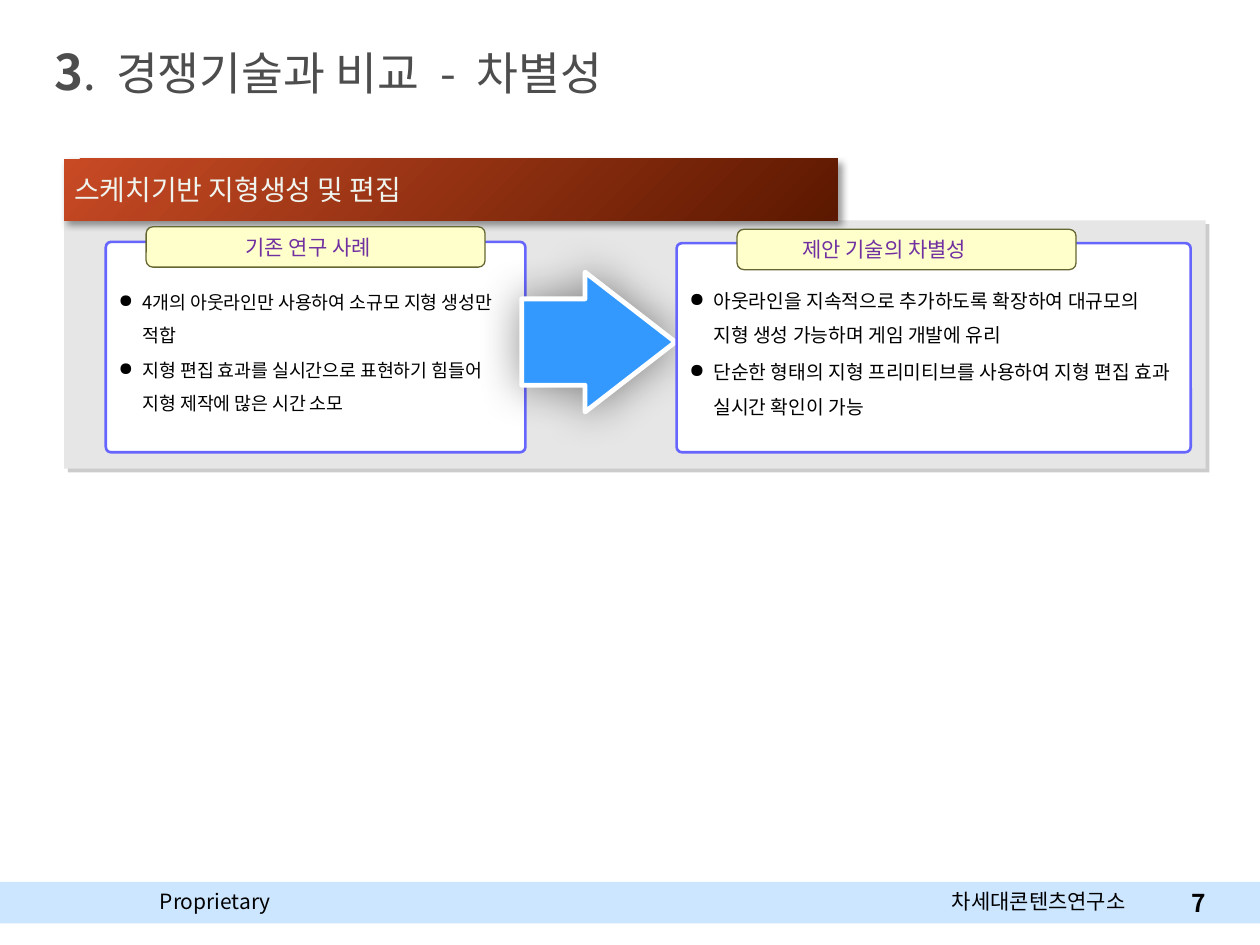
from dataclasses import dataclass

import pptx
from lxml import etree
from pptx.dml.color import RGBColor
from pptx.enum.shapes import MSO_SHAPE
from pptx.enum.text import MSO_ANCHOR, PP_ALIGN
from pptx.oxml.ns import qn
from pptx.util import Inches, Pt


@dataclass(frozen=True)
class Theme:
    font: str = "Noto Sans CJK KR"
    ink: str = "000000"
    title: str = "4D4D4D"
    footer: str = "CDE6FF"
    panel: str = "E6E6E6"
    panel_edge: str = "CCCCCC"
    banner_start: str = "C84A24"
    banner_end: str = "5C1800"
    banner_text: str = "EFF4EF"
    card: str = "FFFFFF"
    card_line: str = "6666FF"
    label: str = "FFFFCC"
    label_line: str = "666633"
    label_text: str = "7030A0"
    arrow: str = "3399FF"
    title_number_size: float = 28
    title_size: float = 26
    banner_size: float = 16
    page_size: float = 14
    small_size: float = 12


THEME = Theme()


def rgb(value):
    return RGBColor.from_string(value)


def add_span(para, text, size, color, bold=False, tracking=None):
    span = para.add_run()
    span.text = text
    span.font.size = Pt(size)
    span.font.bold = bold
    span.font.name = THEME.font
    span.font.color.rgb = rgb(color)
    properties = span.font._element
    etree.SubElement(properties, qn("a:ea"), typeface=THEME.font)
    if tracking:
        properties.set("spc", str(int(tracking * 100)))


def add_box(slide, kind, place, fill=None, line=None, line_width=1, adjust=()):
    box = slide.shapes.add_shape(kind, *map(Inches, place))
    box.shadow.inherit = False
    for index, value in enumerate(adjust):
        box.adjustments[index] = value
    if fill:
        box.fill.solid()
        box.fill.fore_color.rgb = rgb(fill)
    if line:
        box.line.color.rgb = rgb(line)
        box.line.width = Pt(line_width)
    else:
        box.line.fill.background()
    return box


def add_shadow(box, color, opacity, blur, distance):
    effects = box._element.spPr.find(qn("a:effectLst"))
    shadow = etree.SubElement(
        effects, qn("a:outerShdw"), blurRad=str(Pt(blur)), dist=str(Pt(distance)),
        dir=str(45 * 60000), algn="tl", rotWithShape="0")
    shade = etree.SubElement(shadow, qn("a:srgbClr"), val=color)
    etree.SubElement(shade, qn("a:alpha"), val=str(opacity * 1000))


def add_text(slide, place, text, size, color, align=PP_ALIGN.LEFT,
             anchor=MSO_ANCHOR.TOP, bold=False, wrap=True):
    box = slide.shapes.add_textbox(*map(Inches, place))
    frame = box.text_frame
    frame.word_wrap = wrap
    frame.vertical_anchor = anchor
    para = frame.paragraphs[0]
    para.alignment = align
    add_span(para, text, size, color, bold)


def add_title(slide):
    title = slide.shapes.title
    title.left, title.top, title.width, title.height = map(Inches, (0.33, 0.28, 7.83, 0.57))
    title.text_frame.vertical_anchor = MSO_ANCHOR.MIDDLE
    para = title.text_frame.paragraphs[0]
    para.alignment = PP_ALIGN.LEFT
    add_span(para, "3", THEME.title_number_size, THEME.title, bold=True)
    # Wide gaps are tracked spaces
    for text, tracking in ((".", None), (" ", 5.8), ("경쟁기술과 비교", None), (" ", 5.8),
                           ("-", None), (" ", 5.8), ("차별성", None)):
        add_span(para, text, THEME.title_size, THEME.title, tracking=tracking)


def add_banner(slide, text):
    banner = add_box(slide, MSO_SHAPE.RECTANGLE, (0.51, 1.26, 6.14, 0.49))
    banner.fill.gradient()
    banner.fill.gradient_angle = 315
    for stop, color in zip(banner.fill.gradient_stops,
                           (THEME.banner_start, THEME.banner_end)):
        stop.color.rgb = rgb(color)
    add_shadow(banner, THEME.ink, 40, 4, 3)
    frame = banner.text_frame
    frame.margin_left = Inches(0.08)
    frame.vertical_anchor = MSO_ANCHOR.MIDDLE
    para = frame.paragraphs[0]
    para.alignment = PP_ALIGN.LEFT
    add_span(para, text, THEME.banner_size, THEME.banner_text)


def add_card(slide, place, items, size):
    card = add_box(slide, MSO_SHAPE.ROUNDED_RECTANGLE, place, THEME.card,
                   THEME.card_line, 1.5, (0.025,))
    frame = card.text_frame
    frame.word_wrap = True
    frame.vertical_anchor = MSO_ANCHOR.MIDDLE
    frame.margin_left, frame.margin_right = 0, Inches(0.08)
    for index, item in enumerate(items):
        para = frame.paragraphs[0] if index == 0 else frame.add_paragraph()
        properties = para._p.get_or_add_pPr()
        properties.set("marL", str(Inches(0.28)))
        properties.set("indent", str(Inches(-0.19)))
        etree.SubElement(properties, qn("a:buChar"), char="●")
        para.alignment = PP_ALIGN.LEFT
        para.line_spacing = 1.5
        if index:
            para.space_before = Pt(1)
        add_span(para, item, size, THEME.ink)


def add_label(slide, place, text_place, text):
    add_box(slide, MSO_SHAPE.ROUNDED_RECTANGLE, place, THEME.label,
            THEME.label_line, 0.75, (0.167,))
    add_text(slide, text_place, text, THEME.small_size, THEME.label_text, wrap=False)


def add_footer(slide):
    add_box(slide, MSO_SHAPE.RECTANGLE, (0, 7, 10, 0.33), THEME.footer)
    add_text(slide, (1.17, 7, 1.33, 0.3), "Proprietary", THEME.small_size, THEME.ink)
    add_text(slide, (7.26, 7, 1.97, 0.3), "차세대콘텐츠연구소", THEME.small_size,
             THEME.ink, PP_ALIGN.CENTER)
    add_text(slide, (9.19, 7, 0.48, 0.33), "7", THEME.page_size, THEME.ink,
             PP_ALIGN.RIGHT, MSO_ANCHOR.MIDDLE, bold=True, wrap=False)


def main():
    deck = pptx.Presentation()
    deck.slide_width, deck.slide_height = Inches(10), Inches(7.5)
    slide = deck.slides.add_slide(deck.slide_layouts[5])

    # Frame of the page
    add_footer(slide)
    add_title(slide)

    # Panel and its heading
    panel = add_box(slide, MSO_SHAPE.RECTANGLE, (0.51, 1.75, 9.06, 1.97), THEME.panel)
    add_shadow(panel, THEME.panel_edge, 100, 0, 3)
    add_banner(slide, "스케치기반 지형생성 및 편집")

    # Earlier work, arrow, proposed technique
    add_card(slide, (0.84, 1.92, 3.33, 1.67), (
        "4개의 아웃라인만 사용하여 소규모 지형 생성만 적합",
        "지형 편집 효과를 실시간으로 표현하기 힘들어 지형 제작에 많은 시간 소모"), 10.5)
    add_label(slide, (1.16, 1.8, 2.69, 0.32), (1.85, 1.81, 1.32, 0.3), "기존 연구 사례")
    arrow = add_box(slide, MSO_SHAPE.RIGHT_ARROW, (4.14, 2.16, 1.22, 1.11),
                    THEME.arrow, THEME.card, 2.75, (0.617, 0.646))
    add_shadow(arrow, THEME.ink, 43, 25, 0)
    add_card(slide, (5.37, 1.93, 4.08, 1.66), (
        "아웃라인을 지속적으로 추가하도록 확장하여 대규모의 지형 생성 가능하며 게임 개발에 유리",
        "단순한 형태의 지형 프리미티브를 사용하여 지형 편집 효과 실시간 확인이 가능"), 11)
    add_label(slide, (5.85, 1.82, 2.69, 0.32), (6.27, 1.83, 1.66, 0.3), "제안 기술의 차별성")

    deck.save("out.pptx")


if __name__ == "__main__":
    main()
